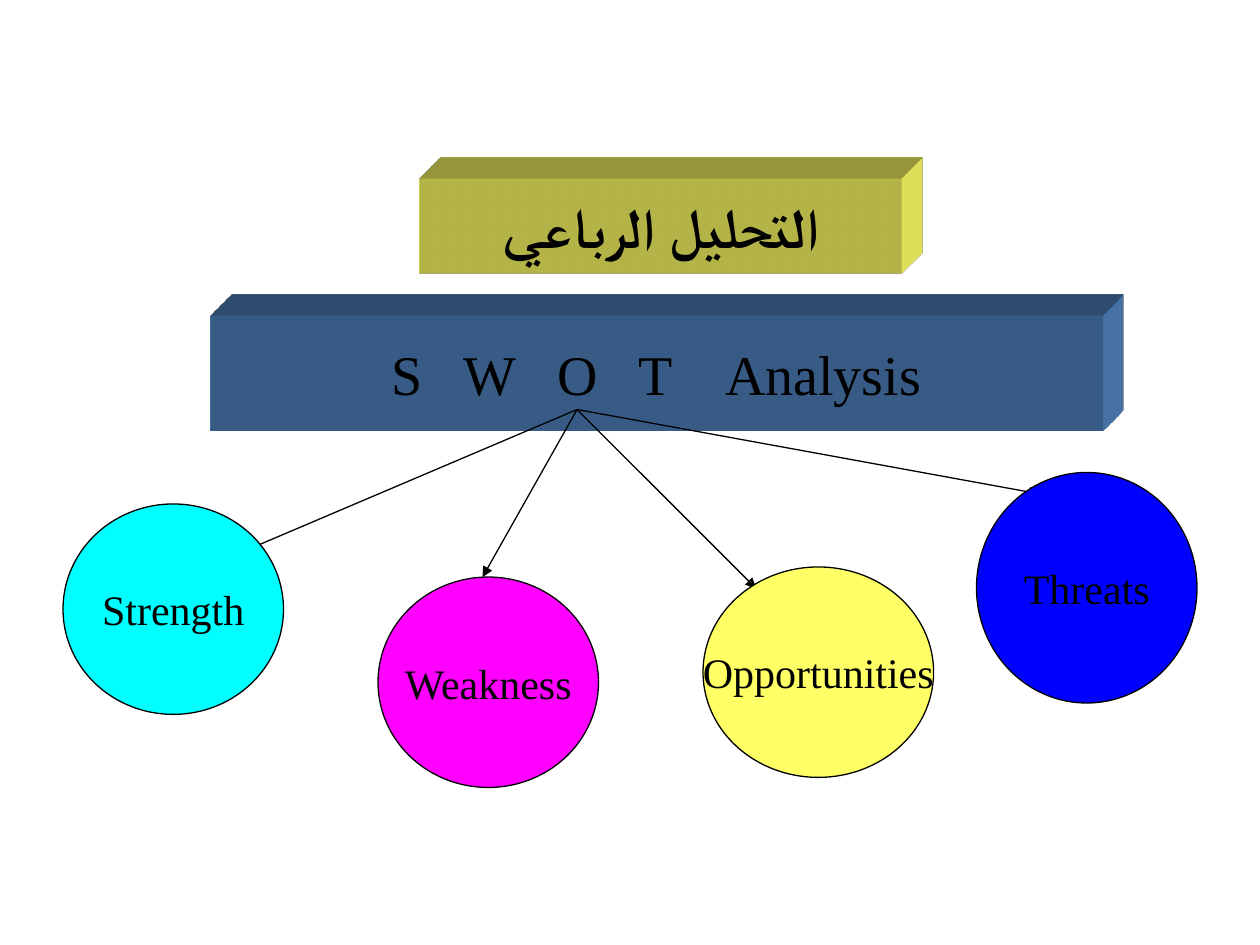
import pptx
import pptx.dml.color
import pptx.enum.shapes
import pptx.enum.text
import pptx.oxml
import pptx.oxml.ns
import pptx.util
from pptx.util import Inches

THEME = {
    "font": "Times New Roman",
    "ink": "000000",
    "line_width": 0.75,
    "bar_size": 32,
    "factor_size": 24,
}

# text, (left, top, width, height), fill, bold, right-to-left
BARS = [
    ("التحليل الرباعي", (3.33, 1.42, 3.83, 0.75), "FFFF66", True, True),
    ("S   W   O   T    Analysis", (1.67, 2.5, 7.08, 0.92), "4F81BD", False, False),
]

# text, (left, top, width, height), fill, arrow tip; from back to front
FACTORS = [
    ("Threats", (7.75, 3.75, 1.75, 1.83), "0000FF", (8.25, 3.92)),
    ("Opportunities", (5.58, 4.5, 1.83, 1.67), "FFFF66", (6, 4.67)),
    ("Weakness", (3, 4.58, 1.75, 1.67), "FF00FF", (3.83, 4.58)),
    ("Strength", (0.5, 4, 1.75, 1.67), "00FFFF", (1.83, 4.42)),
]
ARROW_START = (4.58, 3.25)

NS = pptx.oxml.ns.nsdecls("a")
SHAPES = pptx.enum.shapes.MSO_SHAPE


def rgb(value):
    return pptx.dml.color.RGBColor.from_string(value)


def set_line(line):
    line.color.rgb = rgb(THEME["ink"])
    line.width = pptx.util.Pt(THEME["line_width"])


def add_label_shape(slide, kind, text, box, fill, size, bold=False, rtl=True):
    s = slide.shapes.add_shape(kind, *map(Inches, box))
    s.shadow.inherit = False
    s.fill.solid()
    s.fill.fore_color.rgb = rgb(fill)
    tf = s.text_frame
    tf.word_wrap = False
    tf.vertical_anchor = pptx.enum.text.MSO_ANCHOR.MIDDLE
    tf.text = text
    p = tf.paragraphs[0]
    p.alignment = pptx.enum.text.PP_ALIGN.CENTER
    if rtl:
        p._p.get_or_add_pPr().set("rtl", "1")
    r = p.runs[0]
    r.font.name = THEME["font"]
    r.font.size = pptx.util.Pt(size)
    r.font.bold = bold
    r.font.color.rgb = rgb(THEME["ink"])
    r._r.get_or_add_rPr().append(
        pptx.oxml.parse_xml(f'<a:cs {NS} typeface="{THEME["font"]}"/>'))
    return s


def extrude(s, color):
    """Give a shape depth towards the top right."""
    for xml in (
        f'<a:scene3d {NS}><a:camera prst="legacyObliqueTopRight"/>'
        '<a:lightRig rig="legacyFlat3" dir="b"/></a:scene3d>',
        f'<a:sp3d {NS} extrusionH="430200" prstMaterial="legacyMatte">'
        '<a:bevelT w="13500" h="13500" prst="angle"/>'
        '<a:bevelB w="13500" h="13500" prst="angle"/>'
        f'<a:extrusionClr><a:srgbClr val="{color}"/></a:extrusionClr></a:sp3d>',
    ):
        s._element.spPr.append(pptx.oxml.parse_xml(xml))


def add_arrow(slide, start, end):
    c = slide.shapes.add_connector(
        pptx.enum.shapes.MSO_CONNECTOR.STRAIGHT, *map(Inches, start + end))
    set_line(c.line)
    c.line._get_or_add_ln().append(
        pptx.oxml.parse_xml(f'<a:tailEnd {NS} type="triangle"/>'))
    c._element.spPr.append(pptx.oxml.parse_xml(f"<a:effectLst {NS}/>"))


def main():
    prs = pptx.Presentation()
    prs.slide_width, prs.slide_height = Inches(10), Inches(7.5)
    slide = prs.slides.add_slide(prs.slide_layouts.get_by_name("Blank"))

    for text, box, fill, bold, rtl in BARS:
        bar = add_label_shape(slide, SHAPES.RECTANGLE, text, box, fill,
                              THEME["bar_size"], bold, rtl)
        bar.line.fill.background()
        extrude(bar, fill)

    for text, box, fill, tip in FACTORS:
        add_arrow(slide, ARROW_START, tip)
        factor = add_label_shape(slide, SHAPES.OVAL, text, box, fill,
                                 THEME["factor_size"])
        set_line(factor.line)

    prs.save("out.pptx")


if __name__ == "__main__":
    main()
